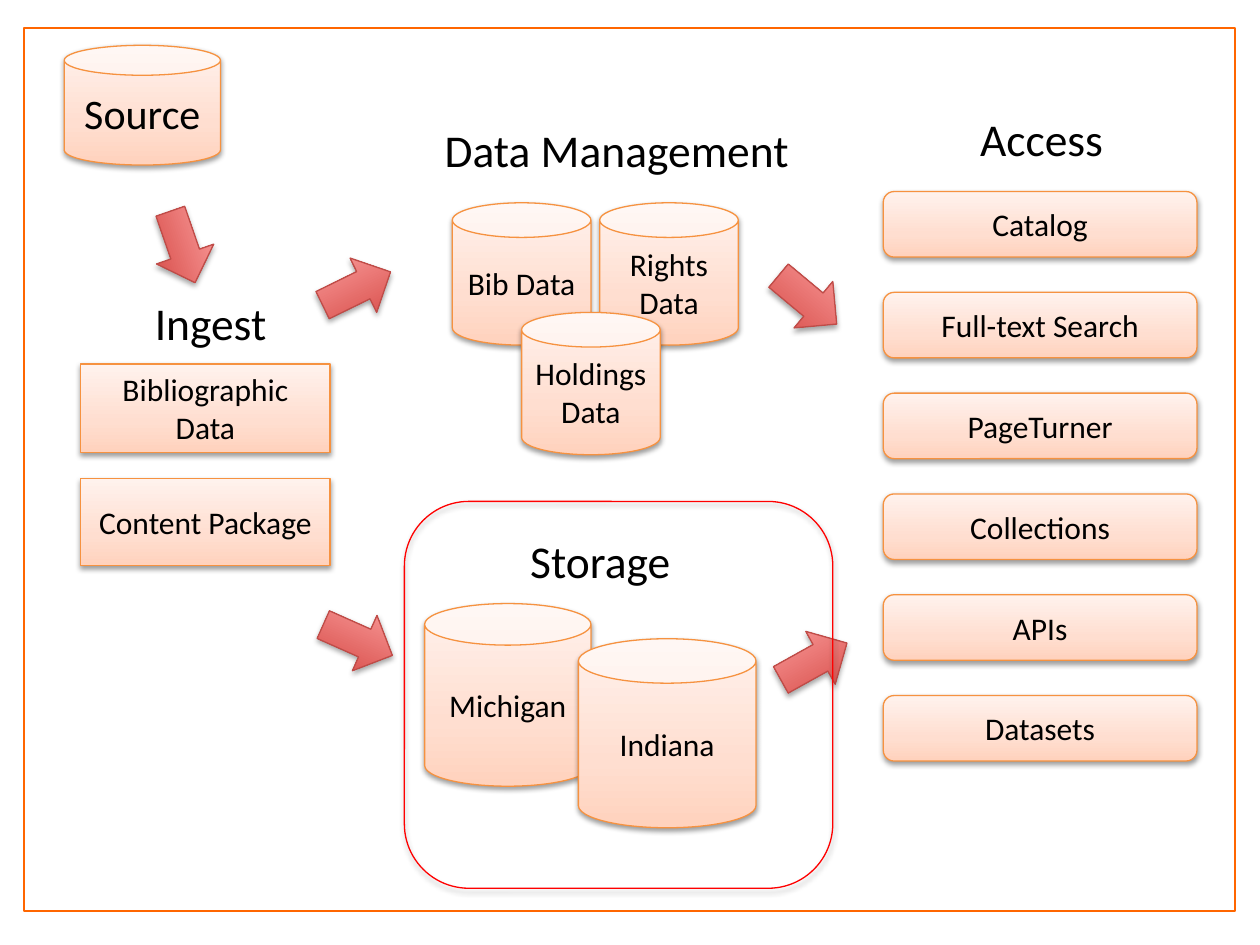
"""Build a slide showing the flow from source through ingest and storage to access."""
from dataclasses import dataclass

from lxml import etree
from pptx import Presentation
from pptx.dml.color import RGBColor
from pptx.enum.shapes import MSO_SHAPE
from pptx.enum.text import MSO_ANCHOR, PP_ALIGN
from pptx.oxml.ns import qn
from pptx.util import Inches, Pt

CAN = MSO_SHAPE.CAN
RECTANGLE = MSO_SHAPE.RECTANGLE
ROUNDED = MSO_SHAPE.ROUNDED_RECTANGLE
ARROW = MSO_SHAPE.RIGHT_ARROW
CENTER = PP_ALIGN.CENTER
LEFT = PP_ALIGN.LEFT
MIDDLE = MSO_ANCHOR.MIDDLE

FONT = "Calibri"
BLACK = "000000"
PEACH_STOPS = ((0, "FFD2BD"), (35, "FFDED0"), (100, "FFF2ED"))
RED_STOPS = ((0, "D1403C"), (100, "FFA6A5"))
ACCESS_TOP, ACCESS_PITCH = 1.52, 0.8


@dataclass
class Node:
    text: str
    kind: int
    left: float
    top: float
    width: float
    height: float
    size: int = 18


@dataclass
class Heading:
    text: str
    left: float
    top: float
    width: float


@dataclass
class FlowArrow:
    left: float
    top: float
    rotation: float


SOURCES = [
    Node("Source", CAN, 0.51, 0.36, 1.24, 0.95, 24),
    Node("Bibliographic Data", RECTANGLE, 0.64, 2.89, 1.98, 0.7),
    Node("Content Package", RECTANGLE, 0.64, 3.8, 1.98, 0.69),
]
DATA_STORES = [
    Node(text, CAN, left, top, 1.1, 1.13)
    for text, left, top in (
        ("Bib Data", 3.59, 1.61),
        ("Rights Data", 4.76, 1.61),
        ("Holdings Data", 4.14, 2.48),
    )
]
ACCESS_SERVICES = [
    Node(text, ROUNDED, 7.01, ACCESS_TOP + index * ACCESS_PITCH, 2.49, 0.52)
    for index, text in enumerate(
        ("Catalog", "Full-text Search", "PageTurner", "Collections", "APIs", "Datasets")
    )
]
STORAGE_SITES = [
    Node("Michigan", CAN, 3.37, 4.79, 1.32, 1.45),
    Node("Indiana", CAN, 4.59, 5.07, 1.41, 1.5),
]
HEADINGS = [
    Heading("Data Management", 3.43, 0.92, 3.58),
    Heading("Storage", 4.11, 4.18, 1.77),
    Heading("Access", 7.68, 0.83, 1.99),
    Heading("Ingest", 1.13, 2.29, 1.61),
]
ARROWS = [
    FlowArrow(1.15, 1.72, 70.9),
    FlowArrow(2.53, 2.05, 333.9),
    FlowArrow(2.54, 4.84, 24),
    FlowArrow(6.11, 2.14, 39.8),
    FlowArrow(6.16, 5.01, 330.9),
]


def color(value: str) -> RGBColor:
    return RGBColor.from_string(value)


def add_color_element(parent, value: str):
    return etree.SubElement(parent, qn("a:srgbClr"), val=value)


def add_outlined(slide, kind, left, top, width, height, line, weight=0.75):
    shape = slide.shapes.add_shape(
        kind, Inches(left), Inches(top), Inches(width), Inches(height)
    )
    shape.shadow.inherit = False
    shape.fill.background()
    shape.line.color.rgb = color(line)
    shape.line.width = Pt(weight)
    return shape


def set_gradient(shape, stops) -> None:
    shape.fill.gradient()
    shape.fill.gradient_angle = 90
    stop_list = shape._element.spPr.find(qn("a:gradFill")).find(qn("a:gsLst"))
    for old_stop in list(stop_list):
        stop_list.remove(old_stop)
    for position, value in stops:
        stop = etree.SubElement(stop_list, qn("a:gs"), pos=str(position * 1000))
        add_color_element(stop, value)


def set_shadow(shape, distance: float, opacity: int) -> None:
    effects = shape._element.spPr.find(qn("a:effectLst"))
    shadow = etree.SubElement(
        effects, qn("a:outerShdw"), blurRad=str(Pt(3.1)), dist=str(Pt(distance)),
        dir="5400000", rotWithShape="0",
    )
    shadow_color = add_color_element(shadow, BLACK)
    etree.SubElement(shadow_color, qn("a:alpha"), val=str(opacity * 1000))


def write_text(shape, text: str, size: int, alignment) -> None:
    shape.text_frame.word_wrap = True
    paragraph = shape.text_frame.paragraphs[0]
    paragraph.alignment = alignment
    run = paragraph.add_run()
    run.text = text
    run.font.name = FONT
    run.font.size = Pt(size)
    run.font.color.rgb = color(BLACK)


def add_node(slide, node: Node) -> None:
    shape = add_outlined(
        slide, node.kind, node.left, node.top, node.width, node.height, "F69240"
    )
    set_gradient(shape, PEACH_STOPS)
    set_shadow(shape, 1.6, 38)
    shape.text_frame.vertical_anchor = MIDDLE
    write_text(shape, node.text, node.size, CENTER)


def add_heading(slide, heading: Heading) -> None:
    shape = slide.shapes.add_textbox(
        Inches(heading.left), Inches(heading.top), Inches(heading.width), Inches(0.54)
    )
    write_text(shape, heading.text, 26, LEFT)


def add_arrow(slide, arrow: FlowArrow) -> None:
    shape = add_outlined(slide, ARROW, arrow.left, arrow.top, 0.6, 0.48, "BF4C48")
    set_gradient(shape, RED_STOPS)
    set_shadow(shape, 1.8, 35)
    shape.rotation = arrow.rotation


def main() -> None:
    presentation = Presentation()
    presentation.slide_width = Inches(10)
    presentation.slide_height = Inches(7.5)
    slide = presentation.slides.add_slide(presentation.slide_layouts[6])

    frame = add_outlined(slide, RECTANGLE, 0.19, 0.22, 9.61, 7.01, "FF6600", 1)
    frame.fill.solid()
    frame.fill.fore_color.rgb = color("FFFFFF")

    for node in SOURCES + DATA_STORES + ACCESS_SERVICES:
        add_node(slide, node)
    for heading in HEADINGS:
        add_heading(slide, heading)
    for arrow in ARROWS:
        add_arrow(slide, arrow)

    storage_box = add_outlined(slide, ROUNDED, 3.21, 3.98, 3.4, 3.07, "FF0000")
    set_shadow(storage_box, 1.8, 35)
    for node in STORAGE_SITES:
        add_node(slide, node)

    presentation.save("out.pptx")


if __name__ == "__main__":
    main()
